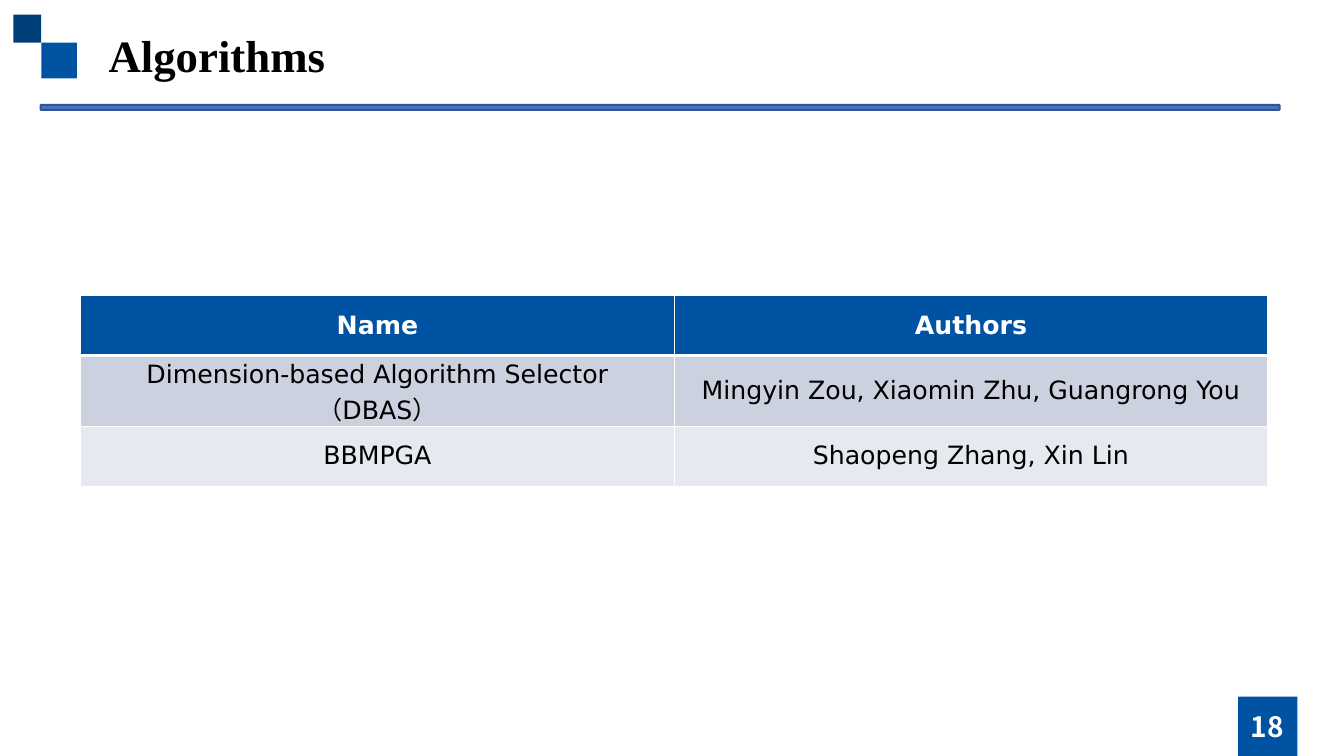
import lxml.etree
import pptx
import pptx.dml.color
import pptx.enum.shapes
import pptx.enum.text
import pptx.oxml.ns
import pptx.util

Pt = pptx.util.Pt
SHAPE = pptx.enum.shapes.MSO_SHAPE
ALIGN = pptx.enum.text.PP_ALIGN
ANCHOR = pptx.enum.text.MSO_ANCHOR
qn = pptx.oxml.ns.qn

TITLE = "Algorithms"
PAGE_NUMBER = "18"
ALGORITHMS = [
    ("Name", "Authors"),
    ("Dimension-based Algorithm Selector（DBAS）", "Mingyin Zou, Xiaomin Zhu, Guangrong You"),
    ("BBMPGA", "Shaopeng Zhang, Xin Lin"),
]
COLORS = {
    "blue": "0053A3", "navy": "003E7A", "rule": "4472C4", "rule edge": "325491",
    "odd row": "CCD1E0", "even row": "E7E9F0", "white": "FFFFFF", "black": "000000",
}
SERIF, SANS, CJK = "Times New Roman", "DejaVu Sans", "Noto Sans CJK SC"

# left, top, width, height in points
SQUARES = [
    ("blue", (29.5, 30.5, 25.5, 25.5)),
    ("navy", (9.5, 10.5, 20, 20)),
    ("blue", (884.3, 497.5, 42.5, 42.5)),
]
TITLE_BOX = (70.5, 16.5, 780.5, 46)
NUMBER_BOX = (850.5, 504.5, 109.5, 29)
RULE_BOX = (29, 74.9, 885, 3.6)
TABLE_LEFT, TABLE_TOP, COLUMN_WIDTH, ROW_HEIGHT = 57.6, 211, 424, 43


def rgb(color):
    return pptx.dml.color.RGBColor.from_string(COLORS[color])


def add_block(slide, preset, box, color):
    block = slide.shapes.add_shape(preset, *map(Pt, box))
    block.shadow.inherit = False
    block.fill.solid()
    block.fill.fore_color.rgb = rgb(color)
    block.line.fill.background()
    return block


def write(frame, text, size, font, color, bold, align):
    paragraph = frame.paragraphs[0]
    paragraph.alignment = align
    run = paragraph.add_run()
    run.text = text
    run.font.size = Pt(size)
    run.font.name = font
    run.font.bold = bold
    run.font.color.rgb = rgb(color)
    east_asian = lxml.etree.Element(qn("a:ea"), typeface=CJK)
    run.font._element.find(qn("a:latin")).addnext(east_asian)


def add_label(slide, box, anchor, *style):
    label = slide.shapes.add_textbox(*map(Pt, box)).text_frame
    label.word_wrap = True
    label.vertical_anchor = anchor
    write(label, *style)


def set_borders(cell, widths):
    """Draw white cell borders; widths maps L, R, T, B to points, in that order."""
    properties = cell._tc.get_or_add_tcPr()
    for side, width in widths.items():
        border = lxml.etree.SubElement(properties, qn("a:ln" + side), w=str(Pt(width)))
        fill = lxml.etree.SubElement(border, qn("a:solidFill"))
        lxml.etree.SubElement(fill, qn("a:srgbClr"), val=COLORS["white"])


def add_algorithm_table(slide):
    rows, columns = len(ALGORITHMS), len(ALGORITHMS[0])
    table = slide.shapes.add_table(
        rows, columns, Pt(TABLE_LEFT), Pt(TABLE_TOP),
        Pt(COLUMN_WIDTH * columns), Pt(ROW_HEIGHT * rows)).table
    for column in table.columns:
        column.width = Pt(COLUMN_WIDTH)
    for r, entries in enumerate(ALGORITHMS):
        table.rows[r].height = Pt(ROW_HEIGHT)
        header = r == 0
        row_color = "blue" if header else "odd row" if r % 2 else "even row"
        borders = {"L": 1, "R": 1, "T": 3 if r == 1 else 1, "B": 3 if header else 1}
        for c, entry in enumerate(entries):
            cell = table.cell(r, c)
            set_borders(cell, borders)
            cell.fill.solid()
            cell.fill.fore_color.rgb = rgb(row_color)
            cell.vertical_anchor = ANCHOR.MIDDLE
            write(cell.text_frame, entry, 18, SANS,
                  "white" if header else "black", header, ALIGN.CENTER)


def main():
    deck = pptx.Presentation()
    deck.slide_width, deck.slide_height = Pt(960), Pt(540)
    slide = deck.slides.add_slide(deck.slide_layouts[6])
    for color, box in SQUARES:
        add_block(slide, SHAPE.RECTANGLE, box, color)
    add_label(slide, TITLE_BOX, ANCHOR.TOP, TITLE, 32, SERIF, "black", True, ALIGN.LEFT)
    add_label(slide, NUMBER_BOX, ANCHOR.MIDDLE, PAGE_NUMBER, 20, CJK, "white", True, ALIGN.CENTER)
    rule = add_block(slide, SHAPE.ROUNDED_RECTANGLE, RULE_BOX, "rule")
    rule.line.color.rgb = rgb("rule edge")
    rule.line.width = Pt(1.5)
    add_algorithm_table(slide)
    deck.save("out.pptx")


if __name__ == "__main__":
    main()
